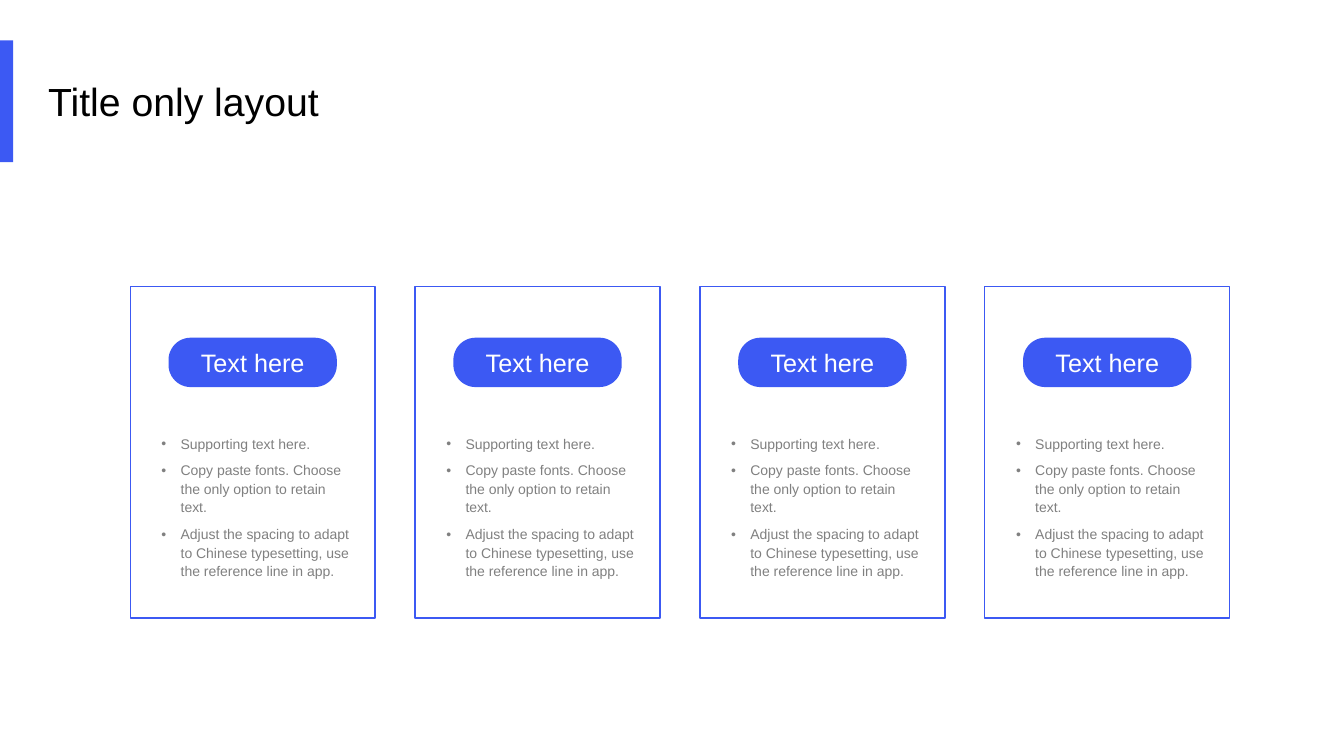
import pptx
import pptx.dml.color
import pptx.enum.shapes
import pptx.enum.text
import pptx.oxml.ns
import pptx.util
import lxml.etree

BLUE = pptx.dml.color.RGBColor(0x3C, 0x59, 0xF3)
GRAY = pptx.dml.color.RGBColor(0x80, 0x80, 0x80)
BLACK = pptx.dml.color.RGBColor(0, 0, 0)
WHITE = pptx.dml.color.RGBColor(0xFF, 0xFF, 0xFF)

CELL = pptx.util.Inches(0.1)
COLUMNS, ROWS = 133.33, 75
CARD_COUNT = 4
CARD_LEFT, CARD_TOP, CARD_PITCH = 12.92, 28.4, 28.26

HEADING = "Text here"
SUPPORTING_TEXT = [
    "Supporting text here.",
    "Copy paste fonts. Choose the only option to retain text.",
    "Adjust the spacing to adapt to Chinese typesetting, use the reference line in app.",
]


class SlideBuilder:
    font_name = "Arial"
    bullet_indent = pptx.util.Inches(0.19)

    def __init__(self, slide):
        self.slide = slide

    def box(self, column, row, width, height):
        return [round(cells * CELL) for cells in (column, row, width, height)]

    def style(self, paragraph, size, color):
        paragraph.font.name = self.font_name
        paragraph.font.size = pptx.util.Pt(size)
        paragraph.font.color.rgb = color

    def shape(self, kind, *cells):
        shape = self.slide.shapes.add_shape(kind, *self.box(*cells))
        shape.shadow.inherit = False
        return shape

    def solid(self, kind, *cells):
        shape = self.shape(kind, *cells)
        shape.fill.solid()
        shape.fill.fore_color.rgb = BLUE
        shape.line.fill.background()
        return shape

    def bar(self, *cells):
        self.solid(pptx.enum.shapes.MSO_SHAPE.RECTANGLE, *cells)

    def frame(self, *cells):
        shape = self.shape(pptx.enum.shapes.MSO_SHAPE.RECTANGLE, *cells)
        shape.fill.background()
        shape.line.color.rgb = BLUE
        shape.line.width = pptx.util.Pt(1)

    def pill(self, text, *cells):
        shape = self.solid(pptx.enum.shapes.MSO_SHAPE.ROUNDED_RECTANGLE, *cells)
        shape.adjustments[0] = 0.45
        shape.text_frame.vertical_anchor = pptx.enum.text.MSO_ANCHOR.MIDDLE
        paragraph = shape.text_frame.paragraphs[0]
        paragraph.text = text
        paragraph.alignment = pptx.enum.text.PP_ALIGN.CENTER
        self.style(paragraph, 18, WHITE)

    def text_box(self, lines, size, color, *cells):
        frame = self.slide.shapes.add_textbox(*self.box(*cells)).text_frame
        frame.word_wrap = True
        frame.text = "\n".join(lines)
        for paragraph in frame.paragraphs:
            self.style(paragraph, size, color)
        return frame

    def bullets(self, lines, *cells):
        for paragraph in self.text_box(lines, 10, GRAY, *cells).paragraphs:
            paragraph.line_spacing = 1.1
            paragraph.space_after = pptx.util.Pt(6)
            properties = paragraph._p.get_or_add_pPr()
            properties.set("marL", str(self.bullet_indent))
            properties.set("indent", str(-self.bullet_indent))
            spacing = properties.find(pptx.oxml.ns.qn("a:spcAft"))
            spacing.addnext(lxml.etree.Element(pptx.oxml.ns.qn("a:buChar"), char="•"))
            spacing.addnext(lxml.etree.Element(pptx.oxml.ns.qn("a:buFont"), typeface=self.font_name))

    def card(self, column, row):
        self.frame(column, row, 24.3, 32.9)
        self.pill(HEADING, column + 3.8, row + 5.1, 16.7, 4.9)
        self.bullets(SUPPORTING_TEXT, column + 2.12, row + 14.1, 20.6, 17.8)


def main():
    presentation = pptx.Presentation()
    presentation.slide_width = round(COLUMNS * CELL)
    presentation.slide_height = ROWS * CELL
    builder = SlideBuilder(presentation.slides.add_slide(presentation.slide_layouts[6]))
    builder.bar(0, 4, 1.3, 12.1)
    builder.text_box(["Title only layout"], 28, BLACK, 3.8, 7.2, 35.1, 5.7)
    for index in range(CARD_COUNT):
        builder.card(CARD_LEFT + index * CARD_PITCH, CARD_TOP)
    presentation.save("out.pptx")


if __name__ == "__main__":
    main()
